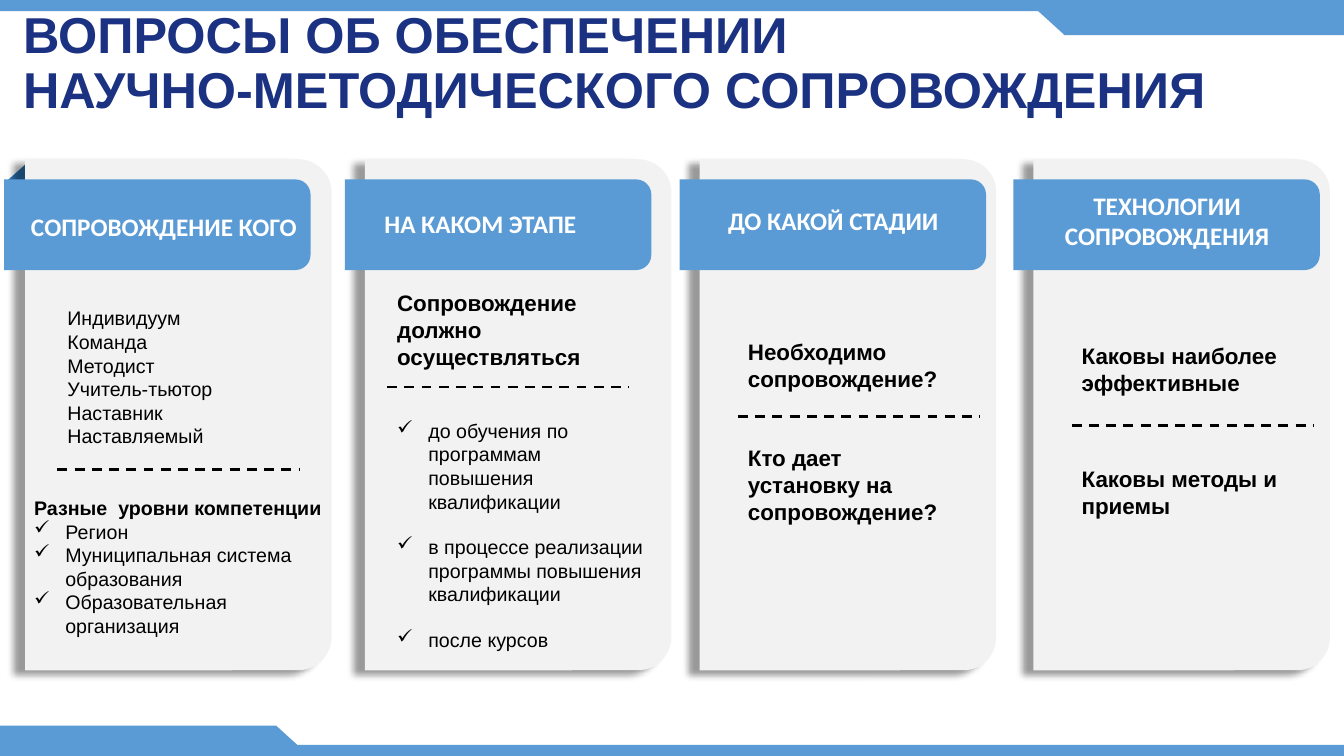
from lxml.etree import SubElement
from pptx import Presentation
from pptx.dml.color import RGBColor
from pptx.enum.dml import MSO_LINE
from pptx.enum.shapes import MSO_CONNECTOR, MSO_SHAPE
from pptx.enum.text import MSO_ANCHOR, PP_ALIGN
from pptx.oxml.ns import qn
from pptx.util import Inches, Pt

COLORS = {"blue": "5B9BD5", "fold": "2E75B6", "card": "F2F2F2",
          "title": "1B3181", "white": "FFFFFF", "black": "000000"}


class SlideBuilder:
    font = "Arial"
    header_font = "Calibri"

    def __init__(self, slide):
        self.slide = slide

    def color(self, name):
        return RGBColor.from_string(COLORS[name])

    def shape(self, kind, x, y, w, h, color="blue", rotation=0):
        if rotation in (90, 270):
            x, y, w, h = x + (w - h) / 2, y + (h - w) / 2, h, w
        sp = self.slide.shapes.add_shape(kind, Inches(x), Inches(y), Inches(w), Inches(h))
        sp.rotation = rotation
        sp.shadow.inherit = False
        sp.fill.solid()
        sp.fill.fore_color.rgb = self.color(color)
        sp.line.fill.background()
        return sp

    def card(self, x, y, w, h):
        sp = self.shape(MSO_SHAPE.ROUND_2_SAME_RECTANGLE, x, y, w, h, "card", 90)
        sp.adjustments[0] = 0.11
        effects = sp._element.spPr.find(qn("a:effectLst"))
        shadow = SubElement(effects, qn("a:outerShdw"), blurRad=str(Pt(5)),
                            dist=str(Inches(0.12)), dir=str(160 * 60000),
                            algn="ctr", rotWithShape="0")
        clr = SubElement(shadow, qn("a:srgbClr"), val=COLORS["black"])
        SubElement(clr, qn("a:alpha"), val="40000")

    def header(self, x, y, w, h):
        self.shape(MSO_SHAPE.ROUND_2_SAME_RECTANGLE, x, y, w, h, "blue", 90)

    def dashes(self, x, y, w):
        ln = self.slide.shapes.add_connector(
            MSO_CONNECTOR.STRAIGHT, Inches(x), Inches(y), Inches(x + w), Inches(y))
        ln.line.color.rgb = self.color("black")
        ln.line.width = Pt(1.75)
        ln.line.dash_style = MSO_LINE.DASH
        SubElement(ln._element.spPr, qn("a:effectLst"))

    def text(self, x, y, w, h, paragraphs, size, color="black", bold=False,
             font=None, align=PP_ALIGN.LEFT, anchor=MSO_ANCHOR.TOP, spacing=None):
        box = self.slide.shapes.add_textbox(Inches(x), Inches(y), Inches(w), Inches(h))
        tf = box.text_frame
        tf.word_wrap = True
        tf.vertical_anchor = anchor
        for i, item in enumerate(paragraphs):
            content, opts = item if isinstance(item, tuple) else (item, {})
            p = tf.paragraphs[0] if i == 0 else tf.add_paragraph()
            p.alignment = align
            p.space_before = Pt(opts.get("before", 0))
            if spacing:
                p.line_spacing = spacing
            if opts.get("check"):
                self.check(p)
            for j, line in enumerate(content.split("\n")):
                if j:
                    p.add_line_break()
                r = p.add_run()
                r.text = line
                r.font.name = font or self.font
                r.font.size = Pt(opts.get("size", size))
                r.font.bold = opts.get("bold", bold)
                r.font.color.rgb = self.color(color)

    def check(self, p):
        pPr = p._p.get_or_add_pPr()
        pPr.set("marL", str(Inches(0.31)))
        pPr.set("indent", str(Inches(-0.31)))
        SubElement(pPr, qn("a:buChar"), char="✓")


def check_item(text, before=0):
    return text, {"check": True, "size": 14, "bold": False, "before": before}


def main():
    prs = Presentation()
    prs.slide_width, prs.slide_height = Inches(13.33), Inches(7.5)
    s = SlideBuilder(prs.slides.add_slide(prs.slide_layouts[6]))

    for y in (0, 7.39):
        s.shape(MSO_SHAPE.RECTANGLE, 0, y, 13.33, 0.11)
    s.shape(MSO_SHAPE.RECTANGLE, 10.55, 0.05, 2.78, 0.3)
    s.shape(MSO_SHAPE.FLOWCHART_MERGE, 10.22, 0.04, 0.66, 0.3)
    s.shape(MSO_SHAPE.RECTANGLE, 0, 7.2, 2.74, 0.3)
    s.shape(MSO_SHAPE.FLOWCHART_MERGE, 2.41, 7.2, 0.66, 0.3, rotation=180)
    s.shape(MSO_SHAPE.RIGHT_TRIANGLE, 0.04, 1.58, 0.27, 0.24, "fold", 270)

    columns = [
        (0.25, 3.04, 0.04, (0.04, 2.05, 3.17, 0.4), ["СОПРОВОЖДЕНИЕ КОГО"], (0.57, 4.66)),
        (3.62, 3.04, 3.42, (3.58, 2.02, 2.37, 0.4), ["НА КАКОМ ЭТАПЕ"], (3.84, 3.84)),
        (6.94, 2.94, 6.74, (6.98, 1.99, 2.57, 0.4), ["ДО КАКОЙ СТАДИИ"], (7.32, 4.13)),
        (10.25, 2.94, 10.05, (10.32, 1.84, 2.51, 0.71),
         ["ТЕХНОЛОГИИ", "СОПРОВОЖДЕНИЯ"], (10.63, 4.22)),
    ]
    for card_x, card_w, header_x, label_box, label, dash_at in columns:
        s.card(card_x, 1.58, card_w, 5.07)
        s.header(header_x, 1.78, 3.04, 0.9)
        s.text(*label_box, label, 18, "white", True, s.header_font, PP_ALIGN.CENTER)
        s.dashes(*dash_at, 2.4)

    s.text(0.13, 0.1, 12.49, 1.08,
           ["ВОПРОСЫ ОБ ОБЕСПЕЧЕНИИ \nНАУЧНО-МЕТОДИЧЕСКОГО СОПРОВОЖДЕНИЯ"],
           36, "title", True, anchor=MSO_ANCHOR.MIDDLE, spacing=0.9)
    s.text(0.57, 2.99, 2.23, 1.51,
           ["Индивидуум", "Команда", "Методист", "Учитель-тьютор",
            "Наставник", "Наставляемый"], 14)
    s.text(0.24, 4.87, 3.17, 1.51,
           [("Разные  уровни компетенции", {"bold": True}),
            check_item("Регион"),
            check_item("Муниципальная система образования"),
            check_item("Образовательная организация")], 14)
    s.text(3.84, 2.82, 2.71, 3.77,
           ["Сопровождение должно осуществляться",
            check_item("до обучения по программам повышения квалификации", 35),
            check_item("в процессе реализации программы повышения квалификации", 16),
            check_item("после курсов", 16)], 16, bold=True)
    s.text(7.32, 3.31, 2.23, 1.99,
           ["Необходимо сопровождение?",
            ("Кто дает установку на \nсопровождение?", {"before": 37})], 16, bold=True)
    s.text(10.63, 3.35, 2.23, 0.64, ["Каковы наиболее эффективные"], 16, bold=True)
    s.text(10.63, 4.57, 2.23, 0.64, ["Каковы методы и приемы"], 16, bold=True)

    prs.save("out.pptx")


if __name__ == "__main__":
    main()
